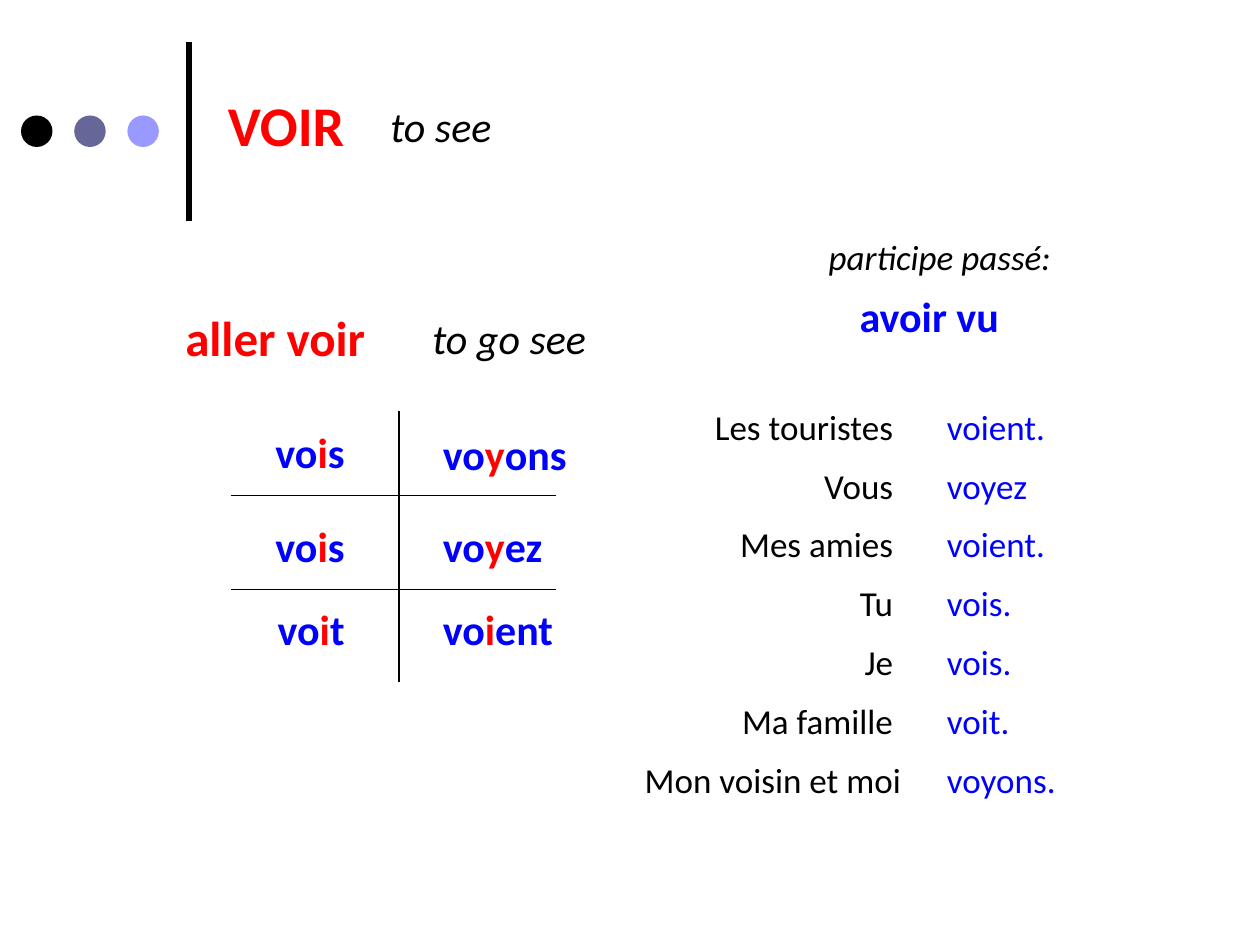
from lxml.etree import SubElement
from pptx import Presentation
from pptx.dml.color import RGBColor
from pptx.enum.shapes import MSO_CONNECTOR, MSO_SHAPE
from pptx.enum.text import MSO_ANCHOR, MSO_AUTO_SIZE, PP_ALIGN
from pptx.oxml.ns import qn
from pptx.util import Pt

COLORS = {"black": "000000", "slate": "666699", "lavender": "9999FF",
          "blue": "0000FF", "red": "FF0000"}
FONT = "Calibri"
LEFT, CENTER, RIGHT = PP_ALIGN.LEFT, PP_ALIGN.CENTER, PP_ALIGN.RIGHT

# (top, singular form, plural form); each form is stem, changing letter, ending
CONJUGATION = [
    (240, ("vo", "i", "s"), ("vo", "y", "ons")),
    (294, ("vo", "i", "s"), ("vo", "y", "ez")),
    (341.5, ("vo", "i", "t"), ("vo", "i", "ent")),
]
SENTENCES = [
    ("Les touristes ", "voient."),
    ("Vous ", "voyez"),
    ("Mes amies ", "voient."),
    ("Tu ", "vois."),
    ("Je ", "vois."),
    ("Ma famille ", "voit."),
    ("Mon voisin et moi", "voyons."),
]


def rgb(color):
    return RGBColor.from_string(COLORS[color])


def add_run(paragraph, text, size, color, bold=False, italic=False):
    run = paragraph.add_run()
    run.text = text
    font = run.font
    font.name, font.size = FONT, Pt(size)
    font.bold, font.italic = bold, italic
    font.color.rgb = rgb(color)


def add_text_frame(slide, left, top, width, height):
    frame = slide.shapes.add_textbox(Pt(left), Pt(top), Pt(width), Pt(height)).text_frame
    frame.word_wrap = True
    return frame


def add_label(slide, box, text, size, color, align=LEFT, **style):
    paragraph = add_text_frame(slide, *box).paragraphs[0]
    paragraph.alignment = align
    add_run(paragraph, text, size, color, **style)


def add_verb_form(slide, box, form, align):
    """Write a verb form with its changing letter in red."""
    paragraph = add_text_frame(slide, *box).paragraphs[0]
    paragraph.alignment = align
    for part, color in zip(form, ("blue", "red", "blue")):
        add_run(paragraph, part, 24, color, bold=True)


def add_sentence_column(slide, box, entries, color, align):
    frame = add_text_frame(slide, *box)
    for index, entry in enumerate(entries):
        paragraph = frame.add_paragraph() if index else frame.paragraphs[0]
        paragraph.alignment = align
        if index:
            paragraph.space_before = Pt(9.6)
        add_run(paragraph, entry, 20, color)


def add_rule(slide, x1, y1, x2, y2, weight=0.75):
    rule = slide.shapes.add_connector(MSO_CONNECTOR.STRAIGHT, Pt(x1), Pt(y1), Pt(x2), Pt(y2))
    rule.line.color.rgb = rgb("black")
    rule.line.width = Pt(weight)
    SubElement(rule._element.spPr, qn("a:effectLst"))


def add_dot(slide, left, color):
    dot = slide.shapes.add_shape(MSO_SHAPE.OVAL, Pt(left), Pt(66), Pt(18), Pt(18))
    dot.shadow.inherit = False
    dot.fill.solid()
    dot.fill.fore_color.rgb = rgb(color)
    dot.line.fill.background()


def set_title(slide, text):
    title = slide.shapes.title
    title.left, title.top, title.width, title.height = Pt(48), Pt(48), Pt(156), Pt(46)
    frame = title.text_frame
    frame.word_wrap = True
    frame.auto_size = MSO_AUTO_SIZE.NONE
    frame.vertical_anchor = MSO_ANCHOR.TOP
    frame.paragraphs[0].alignment = RIGHT
    add_run(frame.paragraphs[0], text, 32, "red", bold=True)


def add_header(slide):
    add_rule(slide, 108, 126, 108, 24, weight=3)
    for index, color in enumerate(("black", "slate", "lavender")):
        add_dot(slide, 12 + index * 30.4, color)
    set_title(slide, "VOIR")
    add_label(slide, (216, 54, 150, 36.5), "to see", 24, "black", italic=True)


def add_conjugation(slide):
    for y in (283, 337):
        add_rule(slide, 132, y, 318, y)
    add_rule(slide, 228, 235, 228, 390)
    for top, singular, plural in CONJUGATION:
        add_verb_form(slide, (132, top, 72, 36.5), singular, RIGHT)
        # the first plural sits slightly lower than its singular
        plural_top = top + 1.2 if top == CONJUGATION[0][0] else top
        add_verb_form(slide, (246, plural_top, 144, 36.5), plural, LEFT)


def main():
    presentation = Presentation()
    presentation.slide_width, presentation.slide_height = Pt(720), Pt(540)
    slide = presentation.slides.add_slide(presentation.slide_layouts[5])

    add_header(slide)
    add_conjugation(slide)
    add_label(slide, (456, 131, 162, 31.5), "participe passé:", 20, "black", CENTER, italic=True)
    add_label(slide, (450, 162.5, 162, 36.5), "avoir vu", 24, "blue", CENTER, bold=True)
    add_label(slide, (30, 172, 192, 41), "aller voir ", 28, "red", RIGHT, bold=True)
    add_label(slide, (240, 175, 150, 36.5), "to go see", 24, "black", italic=True)

    subjects, verbs = zip(*SENTENCES)
    add_sentence_column(slide, (336, 228, 186, 250), subjects, "black", RIGHT)
    add_sentence_column(slide, (534, 228, 132, 250), verbs, "blue", LEFT)

    presentation.save("out.pptx")


if __name__ == "__main__":
    main()
